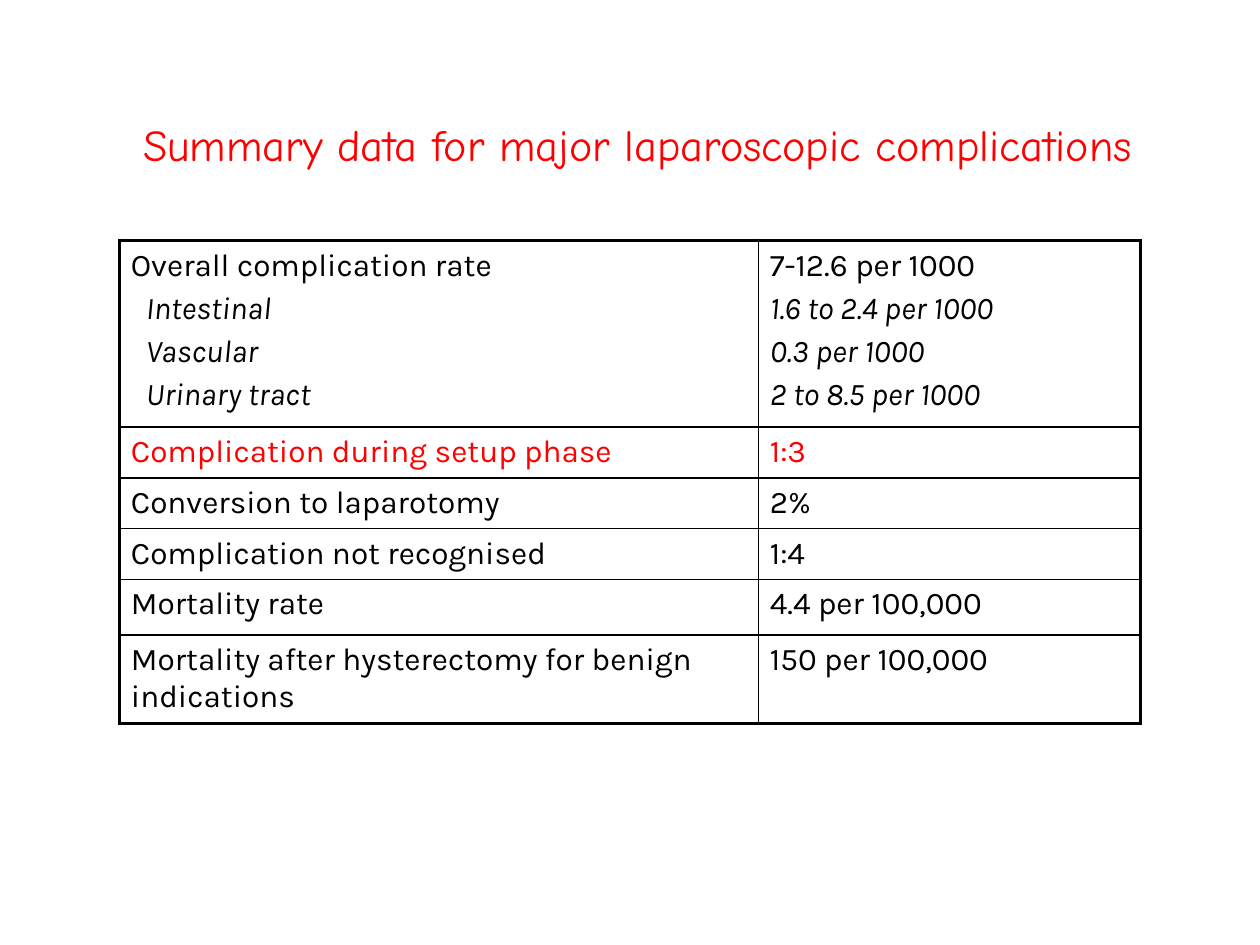
from dataclasses import dataclass

from lxml.etree import SubElement
from pptx import Presentation
from pptx.dml.color import RGBColor
from pptx.enum.text import MSO_ANCHOR, PP_ALIGN
from pptx.oxml.ns import qn
from pptx.util import Cm, Pt

BLACK, RED, WHITE = "000000", "FF0000", "FFFFFF"
THICK, THIN = Pt(2.25), Pt(1)
TITLE_FORMAT = {"name": "Comic Neue", "size": Pt(25.2)}
BODY_FORMAT = {"name": "Karla", "size": Pt(18), "italic": False}
DETAIL_FORMAT = BODY_FORMAT | {"italic": True}
DETAIL_INDENT = Cm(0.3)
CELL_MARGINS = {"margin_left": Cm(0.23), "margin_right": Cm(0.23),
                "margin_top": Cm(0.13), "margin_bottom": Cm(0.13)}
COLUMN_WIDTHS = [Cm(12.88), Cm(7.7)]


@dataclass
class Row:
    """One table row; each column holds a main line and optional details."""
    columns: list[list[str]]
    height: float = 1.02
    color: str = BLACK


ROWS = [
    Row([["Overall complication rate", "Intestinal", "Vascular", "Urinary tract"],
         ["7-12.6 per 1000", "1.6 to 2.4 per 1000", "0.3 per 1000", "2 to 8.5 per 1000"]],
        height=3.76),
    Row([["Complication during setup phase"], ["1:3"]], color=RED),
    Row([["Conversion to laparotomy"], ["2%"]]),
    Row([["Complication not recognised"], ["1:4"]]),
    Row([["Mortality rate"], ["4.4 per 100,000"]], height=1.12),
    Row([["Mortality after hysterectomy for benign indications"], ["150 per 100,000"]],
        height=1.78),
]


def rgb(color: str) -> RGBColor:
    return RGBColor.from_string(color)


def set_values(target, values: dict) -> None:
    for name, value in values.items():
        setattr(target, name, value)


def add_span(para, text: str, color: str, font_format: dict) -> None:
    span = para.add_run()
    span.text = text
    set_values(span.font, font_format)
    span.font.color.rgb = rgb(color)


def draw_borders(cell, widths: dict[str, int]) -> None:
    properties = cell._tc.get_or_add_tcPr()
    for side, width in widths.items():
        line = SubElement(properties, qn(f"a:ln{side}"), w=str(int(width)))
        fill = SubElement(line, qn("a:solidFill"))
        SubElement(fill, qn("a:srgbClr"), val=BLACK)


def fill_cell(cell, lines: list[str], color: str, indent: int) -> None:
    set_values(cell, CELL_MARGINS)
    cell.fill.solid()
    cell.fill.fore_color.rgb = rgb(WHITE)
    frame = cell.text_frame
    for index, text in enumerate(lines):
        para = frame.add_paragraph() if index else frame.paragraphs[0]
        if index:
            para.space_before = Pt(3.6)
            para._p.get_or_add_pPr().set("marL", str(int(indent)))
        add_span(para, text, color, DETAIL_FORMAT if index else BODY_FORMAT)


def add_title(page) -> None:
    box = page.shapes.add_textbox(Cm(1.4), Cm(2.06), Cm(22.91), Cm(1.68))
    set_values(box.text_frame, {"word_wrap": True, "vertical_anchor": MSO_ANCHOR.MIDDLE})
    para = box.text_frame.paragraphs[0]
    para.alignment = PP_ALIGN.CENTER
    add_span(para, "Summary data for major laparoscopic complications", RED, TITLE_FORMAT)


def add_rate_table(page) -> None:
    heights = [Cm(row.height) for row in ROWS]
    table = page.shapes.add_table(len(ROWS), len(COLUMN_WIDTHS), Cm(2.41), Cm(4.85),
                                  sum(COLUMN_WIDTHS), sum(heights)).table
    set_values(table, {"first_row": False, "horz_banding": False})
    for column, width in zip(table.columns, COLUMN_WIDTHS):
        column.width = width
    last_row, last_column = len(ROWS) - 1, len(COLUMN_WIDTHS) - 1

    for r, row in enumerate(ROWS):
        table.rows[r].height = heights[r]
        for c, lines in enumerate(row.columns):
            cell = table.cell(r, c)
            # Thick frame outside, thin rules inside
            draw_borders(cell, {"L": THICK if c == 0 else THIN,
                                "R": THICK if c == last_column else THIN,
                                "T": THICK if r == 0 else THIN,
                                "B": THICK if r == last_row else THIN})
            fill_cell(cell, lines, row.color, DETAIL_INDENT if c == 0 else 0)


def main() -> None:
    deck = Presentation()
    set_values(deck, {"slide_width": Cm(25.4), "slide_height": Cm(19.05)})
    page = deck.slides.add_slide(deck.slide_layouts[6])
    add_title(page)
    add_rate_table(page)
    deck.save("out.pptx")


if __name__ == "__main__":
    main()
